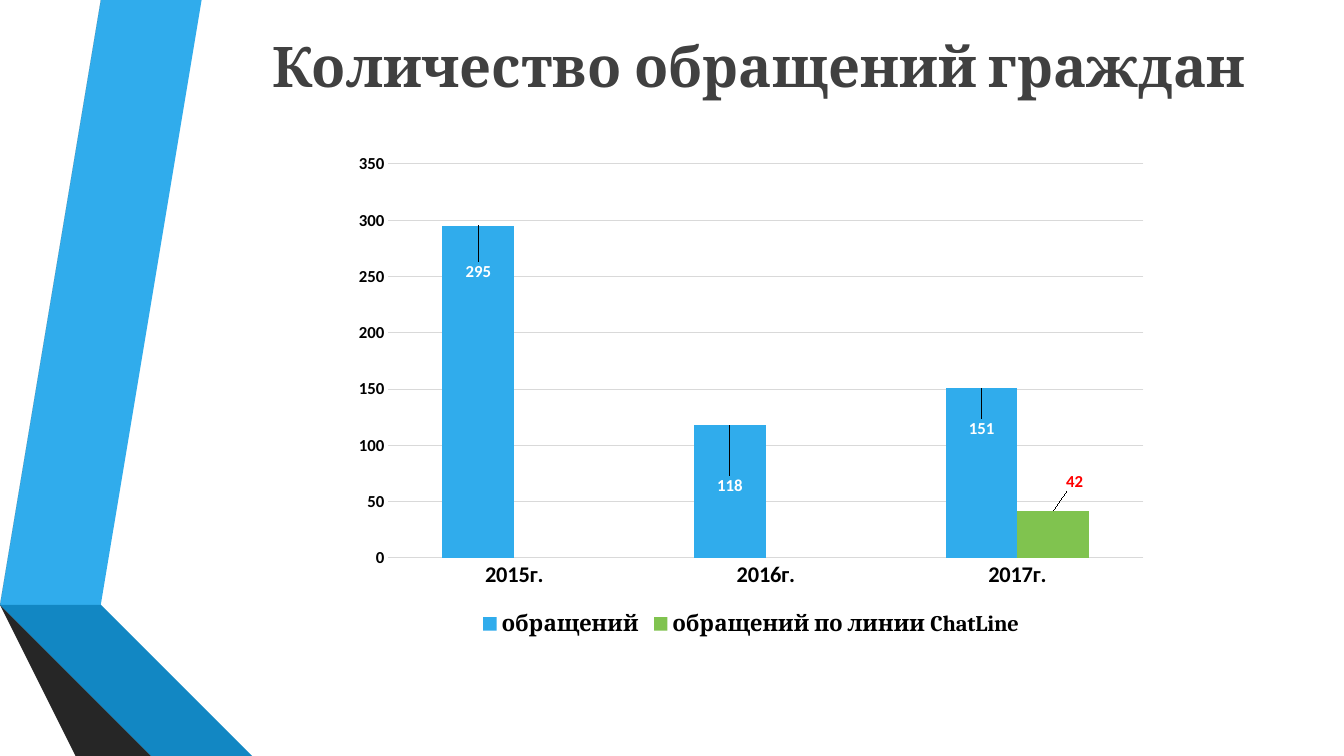
from lxml import etree
from pptx import Presentation
from pptx.chart.data import CategoryChartData
from pptx.dml.color import RGBColor
from pptx.enum import chart as ch, text
from pptx.oxml import parse_xml
from pptx.util import Inches, Pt

C_NS = "http://schemas.openxmlformats.org/drawingml/2006/chart"

RIBBONS = [
    ("30ACEC", [(0.5, 5.78), (0.77, 5.83), (1.73, 0), (1.45, 0)]),
    ("595959", [(1.39, 0), (1.11, 0), (0.16, 5.73), (0.44, 5.77)]),
    ("262626", [(0.16, 5.73), (1.45, 7.5), (1.51, 7.5)]),
    ("0C5A82", [(0.5, 5.79), (2.08, 7.5), (2.14, 7.5)]),
    ("1287C3", [(0.5, 5.79), (2.14, 7.5), (2.83, 7.5), (0.77, 5.83), (0.5, 5.78)]),
    ("404040", [(2.02, 7.5), (0.48, 5.83), (0.44, 5.77), (0.16, 5.73), (1.51, 7.5)]),
]
YEARS = ["2015г.", "2016г.", "2017г."]
# name, values, bar colour, label colour, label shifts by point (share of chart size)
SERIES = [
    ("обращений", [295, 118, 151], "30ACEC", "FFFFFF",
     {0: (0, 0.12), 1: (0, 0.15), 2: (0, 0.11)}),
    ("обращений по линии ChatLine", [None, None, 42], "80C34F", "FF0000",
     {2: (0.026, -0.03)}),
]


def rgb(hex_color):
    return RGBColor.from_string(hex_color)


def set_font(font, size, color="000000", name="Calibri", bold=True):
    font.size, font.name, font.bold = Pt(size), name, bold
    font.color.rgb = rgb(color)


def add_text(slide, content, box, size, color, name):
    sp = slide.shapes.add_textbox(*map(Inches, box))
    tf = sp.text_frame
    tf.word_wrap = True
    tf.vertical_anchor = text.MSO_ANCHOR.MIDDLE
    p = tf.paragraphs[0]
    p.alignment = text.PP_ALIGN.CENTER
    r = p.add_run()
    r.text = content
    set_font(r.font, size, color, name)


def add_ribbons(slide, left, top):
    for color, points in RIBBONS:
        corners = [(left + x, top + y) for x, y in points]
        builder = slide.shapes.build_freeform(*corners[0], scale=Inches(1))
        builder.add_line_segments(corners[1:], close=True)
        sp = builder.convert_to_shape()
        sp.shadow.inherit = False
        sp.fill.solid()
        sp.fill.fore_color.rgb = rgb(color)
        sp.line.fill.background()


def manual_layout(**settings):
    items = "".join(f'<c:{tag} val="{val}"/>' for tag, val in settings.items())
    return parse_xml(f'<c:layout xmlns:c="{C_NS}"><c:manualLayout>{items}'
                     '</c:manualLayout></c:layout>')


def format_series(series, color, label_color, shifts):
    series.format.fill.solid()
    series.format.fill.fore_color.rgb = rgb(color)
    series.invert_if_negative = False
    labels = series.data_labels
    labels.show_value = True
    set_font(labels.font, 12, label_color)
    for i, (dx, dy) in shifts.items():
        label = series.points[i].data_label
        label.position = ch.XL_LABEL_POSITION.OUTSIDE_END
        set_font(label.font, 12, label_color)
        idx = series._element.xpath(f"c:dLbls/c:dLbl/c:idx[@val='{i}']")[0]
        idx.addnext(manual_layout(x=dx, y=dy))


def add_appeals_chart(slide, box):
    data = CategoryChartData()
    data.categories = YEARS
    for name, values, *_ in SERIES:
        data.add_series(name, values)
    chart = slide.shapes.add_chart(
        ch.XL_CHART_TYPE.COLUMN_CLUSTERED, *map(Inches, box), data).chart
    set_font(chart.font, 10, bold=False)
    chart.has_title = False

    plot = chart.plots[0]
    plot.gap_width, plot.overlap, plot.vary_by_categories = 150, 0, False
    for series, (_, _, *style) in zip(plot.series, SERIES):
        format_series(series, *style)

    for axis, size in ((chart.category_axis, 16), (chart.value_axis, 12)):
        axis.major_tick_mark = axis.minor_tick_mark = ch.XL_TICK_MARK.NONE
        axis.format.line.fill.background()
        set_font(axis.tick_labels.font, size)
    axis = chart.value_axis
    axis.minimum_scale, axis.maximum_scale, axis.major_unit = 0, 350, 50
    axis.has_major_gridlines = True
    grid = axis.major_gridlines.format.line
    grid.color.rgb, grid.width = rgb("D9D9D9"), Pt(0.75)

    chart.has_legend = True
    chart.legend.position = ch.XL_LEGEND_POSITION.BOTTOM
    chart.legend.include_in_layout = False
    set_font(chart.legend.font, 16, name="Cambria")

    area = chart._chartSpace.xpath("c:chart/c:plotArea")[0]
    for old in area.findall(etree.QName(C_NS, "layout").text):
        area.remove(old)
    area.insert(0, manual_layout(layoutTarget="inner", xMode="edge", yMode="edge",
                                 x=0.057, y=0.04, w=0.922, h=0.793))


def main():
    prs = Presentation()
    prs.slide_width, prs.slide_height = Inches(13.33), Inches(7.5)
    slide = prs.slides.add_slide(prs.slide_layouts[6])
    add_ribbons(slide, 0, 0)
    add_text(slide, "Количество обращений граждан", (1.73, 0, 11.6, 1.3),
             40, "404040", "Cambria")
    add_appeals_chart(slide, (3.39, 1.43, 8.12, 4.93))
    prs.save("out.pptx")


if __name__ == "__main__":
    main()
